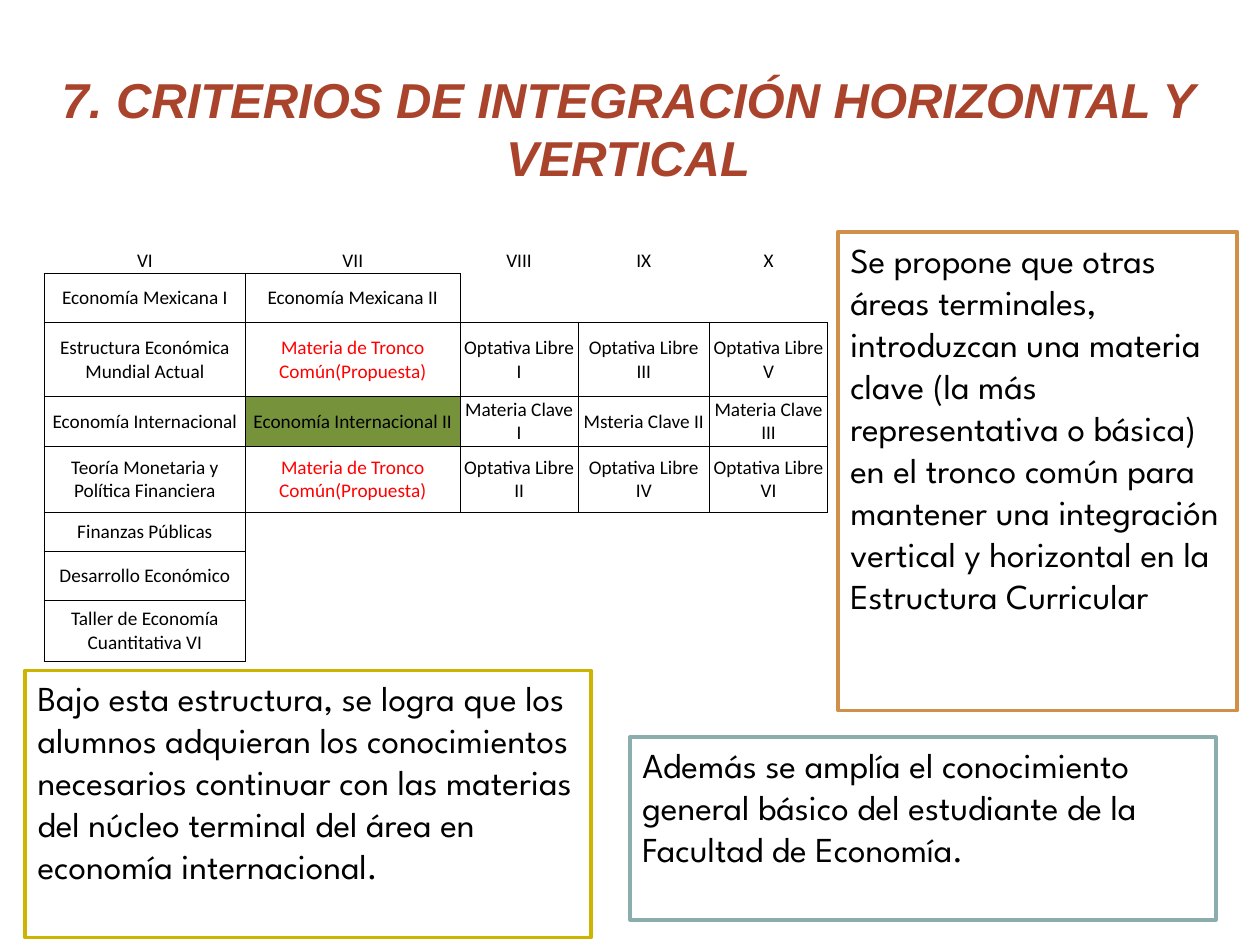
from dataclasses import dataclass

from lxml.etree import SubElement
from pptx import Presentation
from pptx.dml.color import RGBColor
from pptx.enum.shapes import MSO_SHAPE
from pptx.enum.text import MSO_ANCHOR, MSO_AUTO_SIZE, PP_ALIGN
from pptx.oxml.ns import qn
from pptx.util import Inches, Pt

COLORS = {
    "title": "A9432B",
    "text": "000000",
    "proposal": "FF0000",
    "key": "76933C",
    "paper": "FFFFFF",
    "orange": "D19049",
    "yellow": "CCB400",
    "teal": "8CADAE",
}

PROPOSAL = "Materia de Tronco Común(Propuesta)"
KEY_SUBJECT = "Economía Internacional II"
CURRICULUM = [
    ["VI", "VII", "VIII", "IX", "X"],
    ["Economía Mexicana I", "Economía Mexicana II", "", "", ""],
    ["Estructura Económica Mundial Actual", PROPOSAL,
     "Optativa Libre I", "Optativa Libre III", "Optativa Libre V"],
    ["Economía Internacional", KEY_SUBJECT,
     "Materia Clave I", "Msteria Clave II", "Materia Clave III"],
    ["Teoría Monetaria y Política Financiera", PROPOSAL,
     "Optativa Libre II", "Optativa Libre IV", "Optativa Libre VI"],
    ["Finanzas Públicas", "", "", "", ""],
    ["Desarrollo Económico", "", "", "", ""],
    ["Taller de Economía Cuantitativa VI", "", "", "", ""],
]
COLUMN_WIDTHS = [1.6, 1.7, 0.94, 1.04, 0.94]
ROW_HEIGHTS = [0.2, 0.39, 0.59, 0.39, 0.53, 0.31, 0.39, 0.48]
EDGES = {"a:lnL": (0, -1), "a:lnR": (0, 1), "a:lnT": (-1, 0), "a:lnB": (1, 0)}


@dataclass
class Note:
    left: float
    top: float
    width: float
    height: float
    outline: str
    text: str


NOTES = [
    Note(6.65, 1.84, 3.17, 3.8, "orange",
         "Se propone que otras áreas terminales, introduzcan una materia clave "
         "(la más representativa o básica) en el tronco común para mantener una "
         "integración vertical y horizontal en la Estructura Curricular"),
    Note(0.2, 5.32, 4.49, 2.12, "yellow",
         "Bajo esta estructura, se logra que los alumnos adquieran los "
         "conocimientos necesarios continuar con las materias del núcleo "
         "terminal del área en economía internacional."),
    Note(5, 5.85, 4.65, 1.45, "teal",
         "Además se amplía el conocimiento general básico del estudiante de la "
         "Facultad de Economía."),
]


def rgb(name: str) -> RGBColor:
    return RGBColor.from_string(COLORS[name])


def write(frame, text: str, *, font: str, size: float, color: str = "text",
          align=PP_ALIGN.LEFT, bold: bool = False, italic: bool = False) -> None:
    paragraph = frame.paragraphs[0]
    paragraph.alignment = align
    run = paragraph.add_run()
    run.text = text
    run.font.name = font
    run.font.size = Pt(size)
    run.font.bold = bold
    run.font.italic = italic
    run.font.color.rgb = rgb(color)


def draw_title(slide) -> None:
    title = slide.shapes.title
    title.left, title.top = Inches(0.28), Inches(0.25)
    title.width, title.height = Inches(9.41), Inches(1.53)
    title.text_frame.auto_size = MSO_AUTO_SIZE.NONE
    title.text_frame.vertical_anchor = MSO_ANCHOR.MIDDLE
    write(title.text_frame, "7. CRITERIOS DE INTEGRACIÓN HORIZONTAL Y VERTICAL",
          font="Arial", size=28, color="title", align=PP_ALIGN.CENTER,
          bold=True, italic=True)


def draw_note(slide, note: Note) -> None:
    box = slide.shapes.add_shape(
        MSO_SHAPE.RECTANGLE, Inches(note.left), Inches(note.top),
        Inches(note.width), Inches(note.height))
    box.shadow.inherit = False
    box.fill.solid()
    box.fill.fore_color.rgb = rgb("paper")
    box.line.color.rgb = rgb(note.outline)
    box.line.width = Pt(2)
    box.text_frame.word_wrap = True
    box.text_frame.vertical_anchor = MSO_ANCHOR.TOP
    write(box.text_frame, note.text, font="League Spartan", size=20)


def is_subject(row: int, column: int) -> bool:
    return (0 < row < len(ROW_HEIGHTS) and 0 <= column < len(COLUMN_WIDTHS)
            and bool(CURRICULUM[row][column]))


def draw_borders(cell, row: int, column: int) -> None:
    properties = cell._tc.get_or_add_tcPr()
    for edge, (down, across) in EDGES.items():
        border = SubElement(properties, qn(edge), w=str(Pt(0.5)))
        if is_subject(row, column) or is_subject(row + down, column + across):
            fill = SubElement(border, qn("a:solidFill"))
            SubElement(fill, qn("a:srgbClr"), val=COLORS["text"])
        else:
            SubElement(border, qn("a:noFill"))


def draw_cell(cell, row: int, column: int) -> None:
    subject = CURRICULUM[row][column]
    cell.margin_left = cell.margin_right = Inches(0.01)
    cell.margin_top = cell.margin_bottom = 0
    cell.vertical_anchor = MSO_ANCHOR.MIDDLE
    draw_borders(cell, row, column)
    if subject == KEY_SUBJECT:
        cell.fill.solid()
        cell.fill.fore_color.rgb = rgb("key")
    else:
        cell.fill.background()
    if subject:
        write(cell.text_frame, subject, font="Calibri", size=11,
              color="proposal" if subject == PROPOSAL else "text",
              align=PP_ALIGN.CENTER)


def draw_curriculum(slide) -> None:
    curriculum = slide.shapes.add_table(
        len(ROW_HEIGHTS), len(COLUMN_WIDTHS), Inches(0.35), Inches(1.97),
        Inches(sum(COLUMN_WIDTHS)), Inches(sum(ROW_HEIGHTS))).table
    curriculum.first_row = False
    curriculum.horz_banding = False
    for column, width in zip(curriculum.columns, COLUMN_WIDTHS):
        column.width = Inches(width)
    for row, height in zip(curriculum.rows, ROW_HEIGHTS):
        row.height = Inches(height)
    for row in range(len(ROW_HEIGHTS)):
        for column in range(len(COLUMN_WIDTHS)):
            draw_cell(curriculum.cell(row, column), row, column)


def main() -> None:
    presentation = Presentation()
    presentation.slide_width = Inches(10)
    presentation.slide_height = Inches(7.5)
    slide = presentation.slides.add_slide(presentation.slide_layouts[5])
    draw_title(slide)
    draw_curriculum(slide)
    for note in NOTES:
        draw_note(slide, note)
    presentation.save("out.pptx")


if __name__ == "__main__":
    main()
